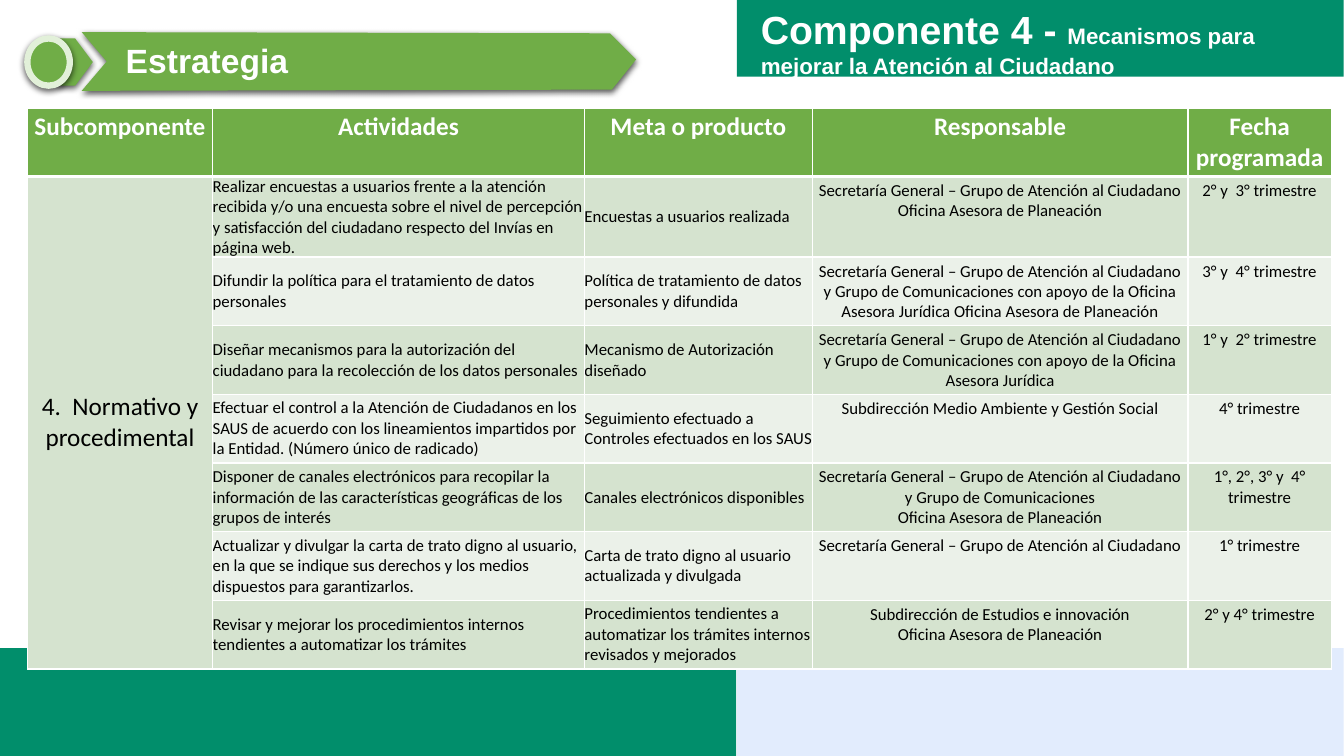
"""Build the slide on the strategy of Componente 4, with its schedule of activities."""
from dataclasses import dataclass

from lxml import etree
from pptx import Presentation
from pptx.dml.color import RGBColor
from pptx.enum.shapes import MSO_SHAPE
from pptx.enum.text import MSO_ANCHOR, MSO_AUTO_SIZE, PP_ALIGN
from pptx.oxml.ns import qn
from pptx.util import Cm, Pt

RECTANGLE, PENTAGON, OVAL = MSO_SHAPE.RECTANGLE, MSO_SHAPE.PENTAGON, MSO_SHAPE.OVAL
TOP, MIDDLE = MSO_ANCHOR.TOP, MSO_ANCHOR.MIDDLE
LEFT, CENTER = PP_ALIGN.LEFT, PP_ALIGN.CENTER
GROW = MSO_AUTO_SIZE.SHAPE_TO_FIT_TEXT
TITLE_ONLY = 5


@dataclass(frozen=True)
class Theme:
    """Colours, fonts and type sizes of the slide."""
    teal: str = "018E6B"
    pale_blue: str = "E2ECFD"
    green: str = "70AD47"
    ring: str = "E2F0D9"
    bands: tuple = ("D5E3CF", "EBF1E9")
    white: str = "FFFFFF"
    black: str = "000000"
    heading_font: str = "Arial"
    table_font: str = "Calibri"
    title: int = 28
    subtitle: int = 16
    banner: int = 24
    header: int = 18
    body: int = 12


THEME = Theme()

BARS = [
    (18.57, -0.03, 15.29, 1.96, THEME.teal),
    (-0.05, 16.33, 18.6, 2.72, THEME.teal),
    (18.57, 16.33, 15.29, 2.72, THEME.pale_blue),
]
ARROW = [(2.06, 0.81), (15.37, 0.84), (16.03, 1.5), (15.42, 2.26), (2.06, 2.29), (2.69, 1.55)]
COLUMN_WIDTHS = [4.67, 9.37, 5.74, 9.47, 3.61]
HEADER_HEIGHT, ROW_HEIGHT = 0.89, 1.73
CELL_INSET = 0.1
HEADERS = ["Subcomponente", "Actividades", "Meta o producto", "Responsable", "Fecha programada"]
SUBCOMPONENT = "4.  Normativo y procedimental"
SECRETARY = "Secretaría General – Grupo de Atención al Ciudadano"
PLANNING = "Oficina Asesora de Planeación"
LEGAL = f"{SECRETARY} y Grupo de Comunicaciones con apoyo de la Oficina Asesora Jurídica"
ACTIVITIES = [
    ("Realizar encuestas a usuarios frente a la atención recibida y/o una encuesta sobre el nivel "
     "de percepción y satisfacción del ciudadano respecto del Invías en página web.",
     "Encuestas a usuarios realizada",
     f"{SECRETARY}\n{PLANNING}", "2° y  3° trimestre"),
    ("Difundir la política para el tratamiento de datos personales",
     "Política de tratamiento de datos personales y difundida",
     f"{LEGAL} {PLANNING}", "3° y  4° trimestre"),
    ("Diseñar mecanismos para la autorización del ciudadano para la recolección de los datos "
     "personales",
     "Mecanismo de Autorización diseñado",
     LEGAL, "1° y  2° trimestre"),
    ("Efectuar el control a la Atención de Ciudadanos en los SAUS de acuerdo con los lineamientos "
     "impartidos por la Entidad. (Número único de radicado)",
     "Seguimiento efectuado a Controles efectuados en los SAUS",
     "Subdirección Medio Ambiente y Gestión Social", "4° trimestre"),
    ("Disponer de canales electrónicos para recopilar la información de las características "
     "geográficas de los grupos de interés",
     "Canales electrónicos disponibles",
     f"{SECRETARY} y Grupo de Comunicaciones\n{PLANNING}", "1°, 2°, 3° y  4° trimestre"),
    ("Actualizar y divulgar la carta de trato digno al usuario, en la que se indique sus derechos "
     "y los medios dispuestos para garantizarlos.",
     "Carta de trato digno al usuario actualizada y divulgada",
     SECRETARY, "1° trimestre"),
    ("Revisar y mejorar los procedimientos internos tendientes a automatizar los trámites",
     "Procedimientos tendientes a automatizar los trámites internos revisados y mejorados",
     f"Subdirección de Estudios e innovación\n{PLANNING}", "2° y 4° trimestre"),
]


def style_paragraph(paragraph, font_name, color, size=None, bold=False, align=LEFT):
    """Set the alignment and font of one paragraph."""
    paragraph.alignment = align
    font = paragraph.font
    font.name, font.bold = font_name, bold
    font.color.rgb = RGBColor.from_string(color)
    if size:
        font.size = Pt(size)


def paint(shape, color):
    """Give a shape a plain fill with neither line nor shadow."""
    shape.shadow.inherit = False
    shape.fill.solid()
    shape.fill.fore_color.rgb = RGBColor.from_string(color)
    shape.line.fill.background()
    return shape


def add_block(shapes, kind, left, top, width, height, color):
    """Add a filled preset shape, placed in centimetres."""
    return paint(shapes.add_shape(kind, Cm(left), Cm(top), Cm(width), Cm(height)), color)


def cast_shadow(shape):
    """Add a soft shadow straight below a shape."""
    effects = shape.element.spPr.find(qn("a:effectLst"))
    shadow = etree.SubElement(effects, qn("a:outerShdw"), blurRad=str(Pt(4.5)),
                              dist=str(Pt(1.5)), dir="5400000", rotWithShape="0")
    color = etree.SubElement(shadow, qn("a:srgbClr"), val=THEME.black)
    etree.SubElement(color, qn("a:alpha"), val="63000")


def write_title(slide):
    """Place the component title over the bar at the top right."""
    title = slide.shapes.title
    title.element.getparent().append(title.element)
    title.left, title.top, title.width, title.height = Cm(18.92), Cm(0), Cm(14.63), Cm(2.13)
    frame = title.text_frame
    frame.word_wrap, frame.vertical_anchor, frame.auto_size = True, TOP, GROW
    heading = frame.paragraphs[0]
    style_paragraph(heading, THEME.heading_font, THEME.white, bold=True)
    for text, size in (("Componente 4 - ", THEME.title),
                       ("Mecanismos para mejorar la Atención al Ciudadano", THEME.subtitle)):
        run = heading.add_run()
        run.text = text
        run.font.size = Pt(size)


def add_banner(slide):
    """Add the grouped arrow banner with its ring and label."""
    shapes = slide.shapes.add_group_shape().shapes
    points = [(Cm(x), Cm(y)) for x, y in ARROW]
    outline = shapes.build_freeform(*points[0])
    outline.add_line_segments(points[1:], close=True)
    arrow = paint(outline.convert_to_shape(), THEME.green)
    tail = add_block(shapes, PENTAGON, 1.45, 0.97, 0.89, 1.19, THEME.green)
    ring = add_block(shapes, OVAL, 0.69, 0.97, 1.07, 1.19, THEME.green)
    ring.line.color.rgb = RGBColor.from_string(THEME.ring)
    ring.line.width = Pt(4.5)
    for part in (arrow, tail, ring):
        cast_shadow(part)
    label = add_block(shapes, RECTANGLE, 2.92, 0.89, 8.84, 1.27, THEME.green)
    frame = label.text_frame
    frame.text = "Estrategia"
    frame.word_wrap, frame.vertical_anchor, frame.auto_size = True, TOP, GROW
    style_paragraph(frame.paragraphs[0], THEME.heading_font, THEME.white, THEME.banner, True)


def set_borders(cell, top, bottom):
    """Draw white borders round a cell, with top and bottom widths in points."""
    properties = cell._tc.get_or_add_tcPr()
    for side, width in (("L", 1), ("R", 1), ("T", top), ("B", bottom)):
        border = etree.SubElement(properties, qn(f"a:ln{side}"), w=str(Pt(width)))
        fill = etree.SubElement(border, qn("a:solidFill"))
        etree.SubElement(fill, qn("a:srgbClr"), val=THEME.white)


def fill_cell(cell, text, fill, size, color=THEME.black, bold=False,
              align=CENTER, anchor=TOP, inset=CELL_INSET, top=1, bottom=1):
    """Write and format one table cell."""
    set_borders(cell, top, bottom)
    cell.fill.solid()
    cell.fill.fore_color.rgb = RGBColor.from_string(fill)
    cell.margin_left = cell.margin_right = cell.margin_top = cell.margin_bottom = Cm(inset)
    cell.vertical_anchor = anchor
    cell.text_frame.text = text
    for paragraph in cell.text_frame.paragraphs:
        style_paragraph(paragraph, THEME.table_font, color, size, bold, align)


def add_schedule(slide):
    """Add the table of activities, goals, people in charge and dates."""
    count = len(ACTIVITIES)
    schedule = slide.shapes.add_table(
        count + 1, len(HEADERS), Cm(0.69), Cm(2.72), Cm(sum(COLUMN_WIDTHS)),
        Cm(HEADER_HEIGHT + count * ROW_HEIGHT)).table
    schedule.horz_banding = False
    for column, width in zip(schedule.columns, COLUMN_WIDTHS):
        column.width = Cm(width)
    for index, row in enumerate(schedule.rows):
        row.height = Cm(ROW_HEIGHT if index else HEADER_HEIGHT)
    for column, header in enumerate(HEADERS):
        fill_cell(schedule.cell(0, column), header, THEME.green, THEME.header,
                  THEME.white, bold=True, bottom=3)
    schedule.cell(1, 0).merge(schedule.cell(count, 0))
    fill_cell(schedule.cell(1, 0), SUBCOMPONENT, THEME.bands[0], THEME.header,
              anchor=MIDDLE, top=3)
    for row, activity in enumerate(ACTIVITIES, start=1):
        band = THEME.bands[(row - 1) % 2]
        for column, text in enumerate(activity, start=1):
            layout = dict(align=LEFT, anchor=MIDDLE, inset=0) if column < 3 else {}
            fill_cell(schedule.cell(row, column), text, band, THEME.body,
                      top=3 if row == 1 else 1, **layout)


def main():
    """Build the slide and save it."""
    deck = Presentation()
    deck.slide_width, deck.slide_height = Cm(33.87), Cm(19.05)
    slide = deck.slides.add_slide(deck.slide_layouts[TITLE_ONLY])
    for left, top, width, height, color in BARS:
        add_block(slide.shapes, RECTANGLE, left, top, width, height, color)
    write_title(slide)
    add_banner(slide)
    add_schedule(slide)
    deck.save("out.pptx")


if __name__ == "__main__":
    main()
